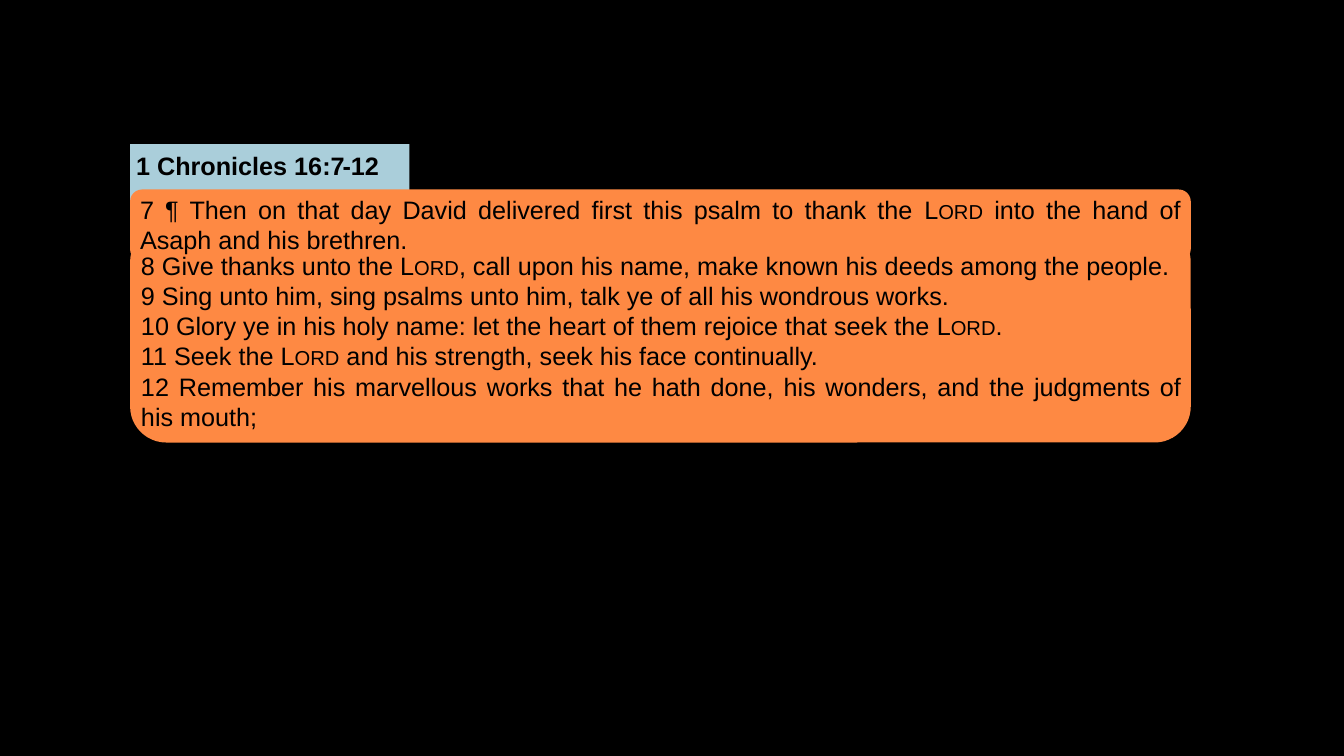
from dataclasses import dataclass

from pptx import Presentation
from pptx.dml.color import RGBColor
from pptx.enum.shapes import MSO_SHAPE
from pptx.enum.text import MSO_ANCHOR, MSO_AUTO_SIZE, PP_ALIGN
from pptx.shapes.autoshape import Shape
from pptx.slide import Slide
from pptx.util import Inches, Pt

COLORS = {"back": "000000", "tab": "AACEDA", "card": "FE8943", "ink": "000000"}
SMALL = "Lord"


@dataclass
class Box:
    left: float
    top: float
    width: float
    height: float


@dataclass
class Panel:
    kind: MSO_SHAPE
    color: str
    box: Box


@dataclass
class Label:
    box: Box
    lines: list[str]
    head: bool = False


PANELS = [
    Panel(MSO_SHAPE.RECTANGLE, "tab", Box(3.46, 1.43, 0.6, 0.71)),
    Panel(MSO_SHAPE.RECTANGLE, "tab", Box(1.29, 1.43, 2.22, 0.71)),
    Panel(MSO_SHAPE.ROUNDED_RECTANGLE, "card", Box(1.29, 2.24, 10.52, 2.15)),
    Panel(MSO_SHAPE.ROUNDED_RECTANGLE, "card", Box(1.29, 1.88, 10.52, 0.71)),
]

TITLE = Label(Box(1.25, 1.44, 2.29, 0.4), ["1 Chronicles 16:7"], True)
LABELS = [
    Label(Box(1.29, 1.88, 10.52, 0.71), [
        "7 ¶ Then on that day David delivered first this psalm to thank the Lord into the hand of Asaph and his brethren.",
    ]),
    Label(Box(1.3, 2.43, 10.52, 1.92), [
        "8 Give thanks unto the Lord, call upon his name, make known his deeds among the people.",
        "9 Sing unto him, sing psalms unto him, talk ye of all his wondrous works.",
        "10 Glory ye in his holy name: let the heart of them rejoice that seek the Lord.",
        "11 Seek the Lord and his strength, seek his face continually.",
        "12 Remember his marvellous works that he hath done, his wonders, and the judgments of his mouth;",
    ]),
    Label(Box(3.3, 1.44, 0.57, 0.4), ["-12"], True),
]


def place(shape: Shape, box: Box) -> None:
    shape.left, shape.top = Inches(box.left), Inches(box.top)
    shape.width, shape.height = Inches(box.width), Inches(box.height)


def draw(slide: Slide, panel: Panel) -> None:
    shape = slide.shapes.add_shape(panel.kind, 0, 0, 0, 0)
    place(shape, panel.box)
    shape.shadow.inherit = False
    shape.fill.solid()
    shape.fill.fore_color.rgb = RGBColor.from_string(COLORS[panel.color])
    shape.line.fill.background()


def write(shape: Shape, label: Label) -> None:
    place(shape, label.box)
    frame = shape.text_frame
    frame.text = "\n".join(label.lines)
    frame.word_wrap = not label.head
    frame.auto_size = MSO_AUTO_SIZE.SHAPE_TO_FIT_TEXT
    frame.vertical_anchor = MSO_ANCHOR.TOP
    for para, line in zip(frame.paragraphs, label.lines):
        para.alignment = PP_ALIGN.LEFT if label.head else PP_ALIGN.JUSTIFY
        before, word, after = line.partition(SMALL)
        para.text = before
        for part in filter(None, (word, after)):
            para.add_run().text = part
        for run in para.runs:
            font = run.font
            font.name, font.size, font.bold = "Arial", Pt(18), label.head
            font.color.rgb = RGBColor.from_string(COLORS["ink"])
            if run.text == SMALL:
                run._r.get_or_add_rPr().set("cap", "small")


def main() -> None:
    deck = Presentation()
    deck.slide_width, deck.slide_height = Inches(13.33), Inches(7.5)
    slide = deck.slides.add_slide(deck.slide_layouts[5])
    back = slide.background.fill
    back.solid()
    back.fore_color.rgb = RGBColor.from_string(COLORS["back"])
    for panel in PANELS:
        draw(slide, panel)
    title = slide.shapes.title
    slide.shapes._spTree.append(title._element)
    write(title, TITLE)
    for label in LABELS:
        write(slide.shapes.add_textbox(0, 0, 0, 0), label)
    deck.save("out.pptx")


if __name__ == "__main__":
    main()
